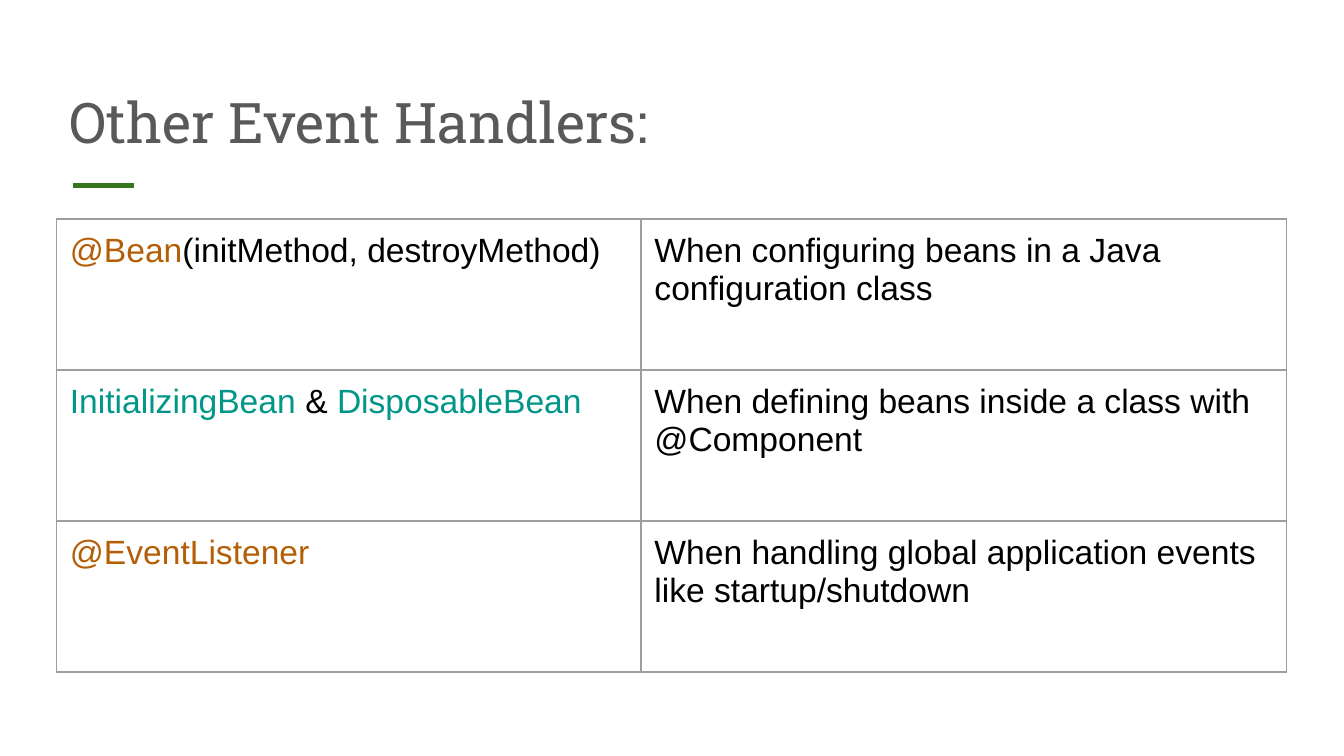
from lxml.etree import SubElement
from pptx import Presentation
from pptx.dml.color import RGBColor
from pptx.enum.shapes import MSO_CONNECTOR as Connector
from pptx.enum.text import MSO_ANCHOR as Anchor
from pptx.oxml import parse_xml
from pptx.oxml.ns import nsdecls, qn
from pptx.util import Inches, Pt

PAGE_WIDTH = 10
PAGE_HEIGHT = PAGE_WIDTH * 9 / 16

BLACK = "000000"
ORANGE = "B45F06"
TEAL = "009688"
GREEN = "38761D"
HEADING = "595959"
BORDER = "9E9E9E"

HANDLERS = [
    ([("@Bean", ORANGE), ("(initMethod, destroyMethod)", BLACK)],
     [("When configuring beans in a Java configuration class", BLACK)]),
    ([("InitializingBean ", TEAL), ("& ", BLACK), ("DisposableBean", TEAL)],
     [("When defining beans inside a class with @Component", BLACK)]),
    ([("@EventListener", ORANGE)],
     [("When handling global application events like startup/shutdown", BLACK)]),
]


def color(value):
    return RGBColor.from_string(value)


def add_text(para, text, *, size=18, font="Arial", fill=BLACK):
    span = para.add_run()
    span.text = text
    span.font.size = Pt(size)
    span.font.name = font
    span.font.color.rgb = color(fill)


def set_margins(target, margin=0.1):
    target.margin_left = target.margin_right = Inches(margin)
    target.margin_top = target.margin_bottom = Inches(margin)


def set_borders(cell, value, width):
    properties = cell._tc.get_or_add_tcPr()
    for position, side in enumerate(("lnL", "lnR", "lnT", "lnB")):
        border = parse_xml(
            f'<a:{side} {nsdecls("a")} w="{Pt(width)}"><a:solidFill>'
            f'<a:srgbClr val="{value}"/></a:solidFill></a:{side}>'
        )
        properties.insert(position, border)


class SlideBuilder:
    title_font = "Roboto Slab"

    def __init__(self, page):
        self.page = page

    def title(self, text, left, top, width, height):
        box = self.page.shapes.add_textbox(
            Inches(left), Inches(top), Inches(width), Inches(height))
        frame = box.text_frame
        frame.word_wrap = True
        frame.vertical_anchor = Anchor.BOTTOM
        set_margins(frame)
        add_text(frame.paragraphs[0], text, size=30, font=self.title_font, fill=HEADING)

    def accent(self, left, right, top):
        line = self.page.shapes.add_connector(
            Connector.STRAIGHT, Inches(left), Inches(top), Inches(right), Inches(top))
        line.line.color.rgb = color(GREEN)
        line.line.width = Pt(3)
        SubElement(line._element.spPr, qn("a:effectLst"))

    def table(self, rows, left, top, widths, height):
        table = self.page.shapes.add_table(
            len(rows), len(widths), Inches(left), Inches(top),
            Inches(sum(widths)), Inches(height)).table
        table.first_row = table.horz_banding = False
        for column, width in zip(table.columns, widths):
            column.width = Inches(width)
        for row, contents in zip(table.rows, rows):
            for cell, spans in zip(row.cells, contents):
                self.cell(cell, spans)

    def cell(self, cell, spans):
        cell.fill.background()
        set_margins(cell)
        set_borders(cell, BORDER, 0.75)
        for text, fill in spans:
            add_text(cell.text_frame.paragraphs[0], text, fill=fill)


def main():
    deck = Presentation()
    deck.slide_width = Inches(PAGE_WIDTH)
    deck.slide_height = Inches(PAGE_HEIGHT)
    builder = SlideBuilder(deck.slides.add_slide(deck.slide_layouts[6]))
    builder.accent(0.54, 1, 1.38)
    builder.table(HANDLERS, 0.42, 1.63, [4.35, 4.8], 3.37)
    builder.title("Other Event Handlers:", 0.42, 0.5, 9.15, 0.75)
    deck.save("out.pptx")


if __name__ == "__main__":
    main()
